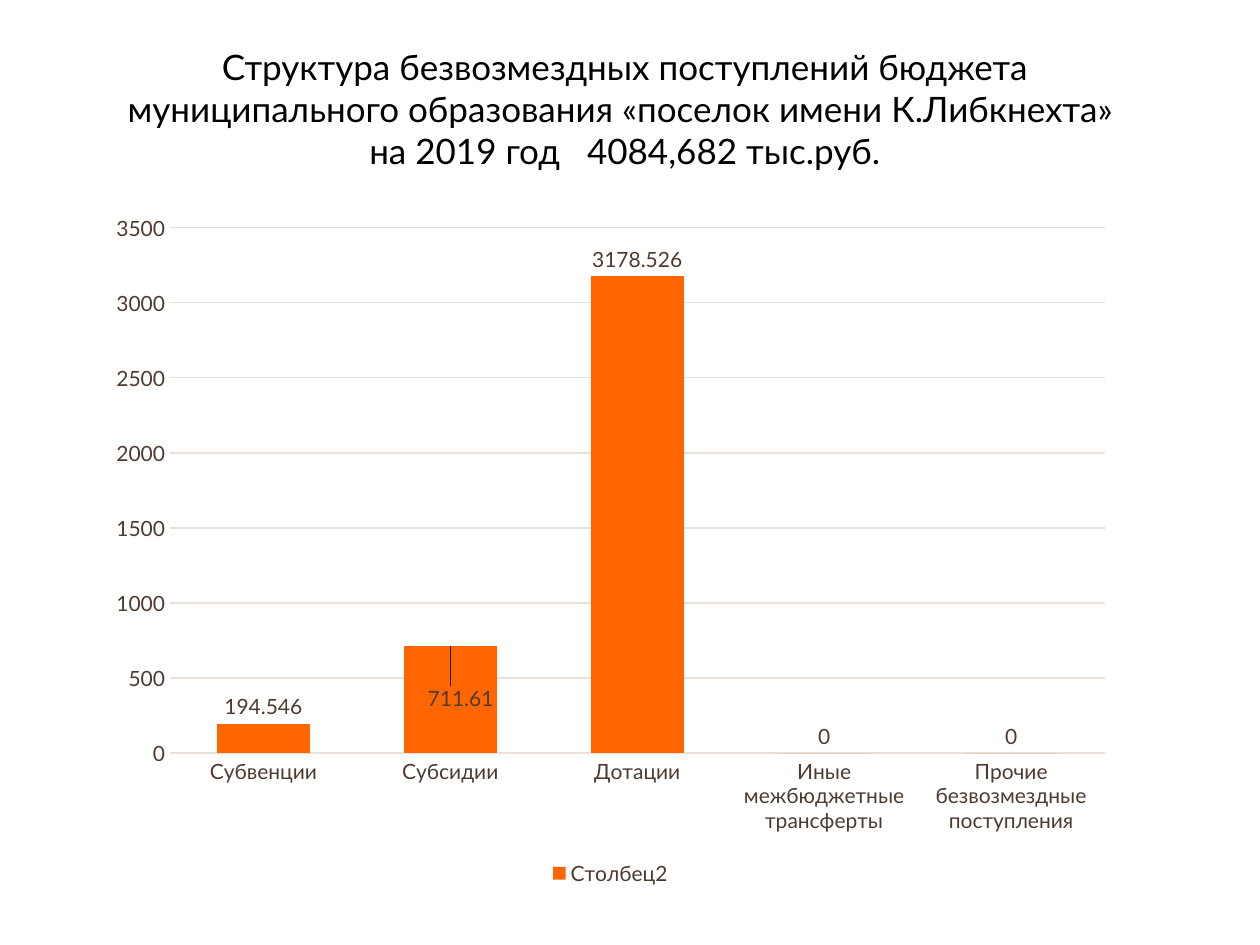
from dataclasses import dataclass

from lxml.etree import Element, SubElement
from pptx import Presentation
from pptx.chart.data import CategoryChartData
from pptx.chart.series import BarSeries
from pptx.dml.color import RGBColor
from pptx.enum.chart import (XL_CHART_TYPE, XL_LABEL_POSITION,
                             XL_LEGEND_POSITION, XL_TICK_MARK)
from pptx.enum.text import MSO_ANCHOR, PP_ALIGN
from pptx.oxml.ns import qn
from pptx.slide import Slide
from pptx.util import Inches, Pt


@dataclass(frozen=True)
class Theme:
    face: str = "Lato"
    ink: RGBColor = RGBColor(0, 0, 0)
    brown: RGBColor = RGBColor.from_string("4E3B30")
    grid: RGBColor = RGBColor.from_string("E9E0DB")
    bar: RGBColor = RGBColor.from_string("FF6600")
    title: Pt = Pt(20)
    label: Pt = Pt(12)
    line: Pt = Pt(0.75)


@dataclass(frozen=True)
class Item:
    name: str
    value: float


THEME = Theme()
TITLE = [
    "Структура безвозмездных поступлений бюджета муниципального "
    "образования «поселок имени К.Либкнехта» ",
    "на 2019 год   4084,682 тыс.руб.",
]
ITEMS = [
    Item("Субвенции", 194.546),
    Item("Субсидии", 711.61),
    Item("Дотации", 3178.526),
    Item("Иные межбюджетные трансферты", 0),
    Item("Прочие безвозмездные поступления", 0),
]


def style(font, size: Pt, color: RGBColor) -> None:
    font.name = THEME.face
    font.size = size
    font.bold = False
    font.color.rgb = color


def add_title(slide: Slide) -> None:
    box = slide.shapes.add_textbox(Inches(0.7), Inches(0.31),
                                   Inches(8.52), Inches(1.11))
    frame = box.text_frame
    frame.word_wrap = True
    frame.vertical_anchor = MSO_ANCHOR.TOP
    for i, text in enumerate(TITLE):
        para = frame.add_paragraph() if i else frame.paragraphs[0]
        para.alignment = PP_ALIGN.CENTER
        run = para.add_run()
        run.text = text
        style(run.font, THEME.title, THEME.ink)


def shift_label(series: BarSeries, index: int, x: float, y: float) -> None:
    label = series.points[index].data_label
    style(label.font, THEME.label, THEME.brown)
    label.position = XL_LABEL_POSITION.OUTSIDE_END
    layout = Element(qn("c:layout"))
    manual = SubElement(layout, qn("c:manualLayout"))
    for axis, move in (("x", x), ("y", y)):
        SubElement(manual, qn(f"c:{axis}")).set("val", str(move))
    mark = series._element.xpath(f"c:dLbls/c:dLbl/c:idx[@val='{index}']")[0]
    mark.addnext(layout)


def add_bars(slide: Slide) -> None:
    data = CategoryChartData()
    data.categories = [item.name for item in ITEMS]
    data.add_series("Столбец2", [item.value for item in ITEMS])
    chart = slide.shapes.add_chart(
        XL_CHART_TYPE.COLUMN_CLUSTERED, Inches(0.76), Inches(1.6),
        Inches(8.17), Inches(5.47), data).chart
    style(chart.font, THEME.label, THEME.brown)
    chart.has_title = False
    chart.has_legend = True
    chart.legend.position = XL_LEGEND_POSITION.BOTTOM
    chart.legend.include_in_layout = False
    style(chart.legend.font, THEME.label, THEME.brown)

    for axis in (chart.category_axis, chart.value_axis):
        axis.major_tick_mark = axis.minor_tick_mark = XL_TICK_MARK.NONE
        style(axis.tick_labels.font, THEME.label, THEME.brown)
    chart.value_axis.format.line.fill.background()
    chart.value_axis.has_major_gridlines = True
    for part in (chart.category_axis, chart.value_axis.major_gridlines):
        part.format.line.color.rgb = THEME.grid
        part.format.line.width = THEME.line

    plot = chart.plots[0]
    plot.vary_by_categories = False
    plot.gap_width = 100
    plot.overlap = -24
    series = plot.series[0]
    series.format.fill.solid()
    series.format.fill.fore_color.rgb = THEME.bar
    labels = series.data_labels
    labels.show_value = True
    labels.position = XL_LABEL_POSITION.OUTSIDE_END
    style(labels.font, THEME.label, THEME.brown)
    shift_label(series, 1, 0.01, 0.1)


def main() -> None:
    deck = Presentation()
    deck.slide_width = Inches(10)
    deck.slide_height = Inches(7.5)
    slide = deck.slides.add_slide(deck.slide_layouts[6])
    add_bars(slide)
    add_title(slide)
    deck.save("out.pptx")


if __name__ == "__main__":
    main()
